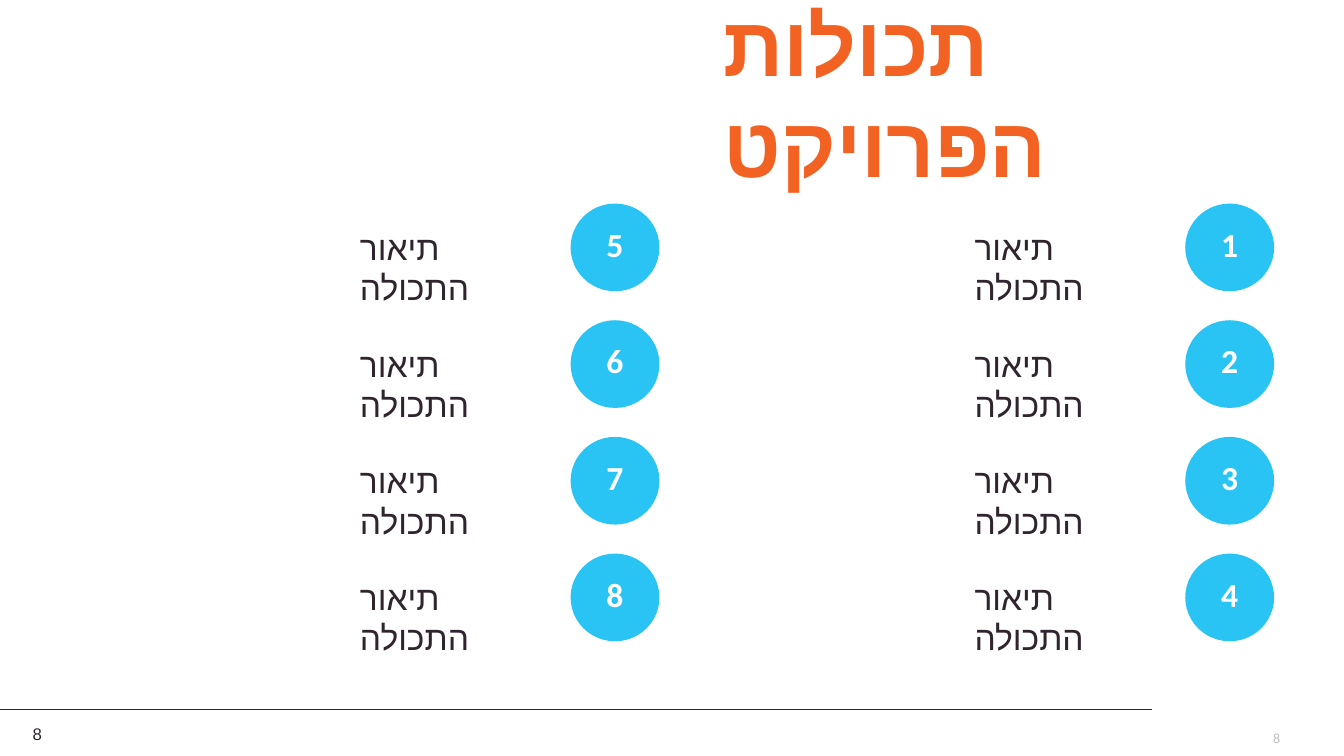
from lxml import etree
from pptx import Presentation
from pptx.dml.color import RGBColor
from pptx.enum.shapes import MSO_CONNECTOR, MSO_SHAPE
from pptx.enum.text import MSO_ANCHOR, MSO_AUTO_SIZE, PP_ALIGN
from pptx.oxml.ns import qn
from pptx.util import Cm, Pt

LEFT, CENTER, RIGHT = PP_ALIGN.LEFT, PP_ALIGN.CENTER, PP_ALIGN.RIGHT
TOP, MIDDLE = MSO_ANCHOR.TOP, MSO_ANCHOR.MIDDLE
ELLIPSE, STRAIGHT = MSO_SHAPE.OVAL, MSO_CONNECTOR.STRAIGHT
NO_AUTOSIZE = MSO_AUTO_SIZE.NONE

ORANGE = RGBColor(0xF2, 0x62, 0x22)
CYAN = RGBColor(0x2A, 0xC4, 0xF4)
DARK = RGBColor(0x30, 0x24, 0x2F)
RULE = RGBColor(0x2F, 0x23, 0x2E)
GRAY = RGBColor(0xBF, 0xBF, 0xBF)
WHITE = RGBColor(0xFF, 0xFF, 0xFF)

TITLE_ONLY = 5
ROWS = 4
COLUMN_LEFTS = (29.87, 14.38)
FIRST_TOP, ROW_PITCH = 5.13, 2.94


class SlideBuilder:
    """Holds the fonts and the current slide."""

    body_font = "Arial"
    number_font = "Calibri"

    def __init__(self, presentation):
        self.slide = presentation.slides.add_slide(
            presentation.slide_layouts[TITLE_ONLY])

    def set_text(self, shape, text, size, color, font=body_font, bold=False,
                 align=LEFT, anchor=TOP):
        frame = shape.text_frame
        frame.word_wrap = True
        frame.auto_size = NO_AUTOSIZE
        frame.vertical_anchor = anchor
        frame.text = text
        paragraph = frame.paragraphs[0]
        paragraph.alignment = align
        paragraph.font.size = Pt(size)
        paragraph.font.bold = bold
        paragraph.font.color.rgb = color
        paragraph.font.name = font
        # Hebrew letters take the complex-script font
        properties = paragraph._p.pPr.find(qn("a:defRPr"))
        etree.SubElement(properties, qn("a:cs"), typeface=font)
        return paragraph

    def title(self, text, left, top, width, height):
        shape = self.slide.shapes.title
        shape.left, shape.top = Cm(left), Cm(top)
        shape.width, shape.height = Cm(width), Cm(height)
        paragraph = self.set_text(shape, text, 60, ORANGE, bold=True,
                                  anchor=MIDDLE)
        paragraph.line_spacing = 1.0
        paragraph._p.pPr.set("rtl", "1")

    def text(self, text, left, top, width, height, size, color, **style):
        box = self.slide.shapes.add_textbox(
            Cm(left), Cm(top), Cm(width), Cm(height))
        self.set_text(box, text, size, color, **style)
        return box

    def page_number(self, text, left, top, width, size, color, font):
        box = self.text(text, left, top, width, 0.76, size, color,
                        font=font, align=RIGHT, anchor=MIDDLE)
        frame = box.text_frame
        frame.margin_left = frame.margin_right = Cm(0.33)
        frame.margin_top = frame.margin_bottom = Cm(0.18)

    def number_circle(self, number, left, top):
        circle = self.slide.shapes.add_shape(
            ELLIPSE, Cm(left), Cm(top), Cm(2.24), Cm(2.21))
        circle.shadow.inherit = False
        circle.fill.solid()
        circle.fill.fore_color.rgb = CYAN
        circle.line.fill.background()
        paragraph = self.set_text(circle, str(number), 24, WHITE,
                                  self.number_font, True, CENTER, MIDDLE)
        paragraph.line_spacing = 0.8

    def rule(self, left, right, top):
        line = self.slide.shapes.add_connector(
            STRAIGHT, Cm(left), Cm(top), Cm(right), Cm(top))
        line.line.color.rgb = RULE
        line.line.width = Pt(0.75)
        etree.SubElement(line._element.spPr, qn("a:effectLst"))


def main():
    presentation = Presentation()
    presentation.slide_width, presentation.slide_height = Cm(33.87), Cm(19.05)
    builder = SlideBuilder(presentation)

    # Footer
    builder.page_number("8", 0.15, 18.11, 1.24, 12, DARK, builder.body_font)
    builder.rule(0, 29.03, 17.88)
    builder.page_number("8", 27.48, 18.21, 5.11, 10, GRAY,
                        builder.number_font)

    # Title
    builder.title("תכולות הפרויקט", 17.98, 0.94, 14.86, 2.82)

    # Numbered items, right column first
    for column, left in enumerate(COLUMN_LEFTS):
        for row in range(ROWS):
            top = FIRST_TOP + row * ROW_PITCH
            builder.number_circle(column * ROWS + row + 1, left, top)
            builder.text("תיאור התכולה", left - 5.56, top + 0.46, 5.21, 1.27,
                         24, DARK)

    presentation.save("out.pptx")


if __name__ == "__main__":
    main()
